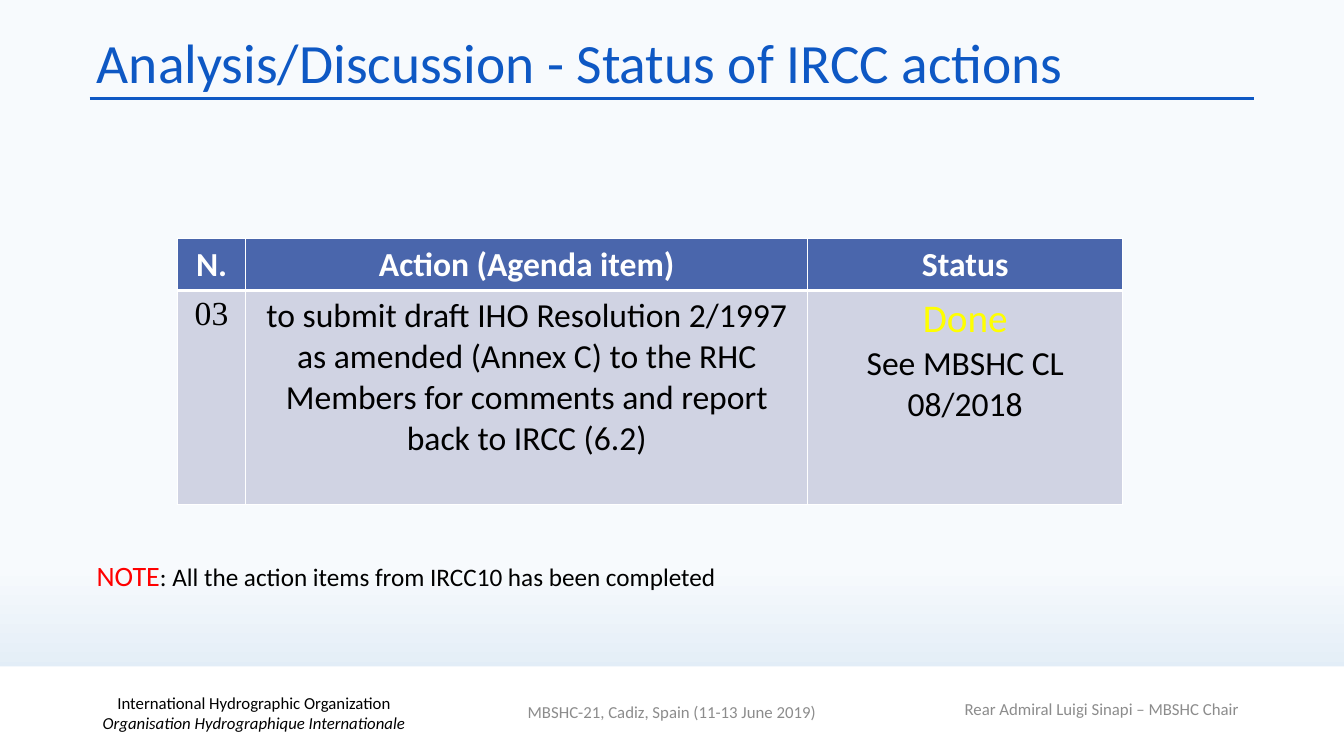
from lxml.etree import SubElement
from pptx import Presentation
from pptx.dml.color import RGBColor
from pptx.enum.shapes import MSO_CONNECTOR, MSO_SHAPE
from pptx.enum.text import MSO_ANCHOR, MSO_AUTO_SIZE, PP_ALIGN
from pptx.oxml.ns import qn
from pptx.util import Pt

BLUE = RGBColor(0x0E, 0x58, 0xC4)
HEADER_BLUE = RGBColor(0x4A, 0x66, 0xAC)
ROW_LILAC = RGBColor(0xD0, 0xD3, 0xE3)
SKY_TOP = RGBColor(0xF7, 0xFA, 0xFD)
SKY_BOTTOM = RGBColor(0xD0, 0xE2, 0xF1)
WHITE = RGBColor(0xFF, 0xFF, 0xFF)
BLACK = RGBColor(0, 0, 0)
GREY = RGBColor(0x8C, 0x8C, 0x8C)
RED = RGBColor(0xFF, 0, 0)
YELLOW = RGBColor(0xFF, 0xFF, 0)


def write(paragraph, text, size=24, color=BLACK, font="Calibri", bold=False, italic=False):
    """Add a formatted run to a paragraph."""
    run = paragraph.add_run()
    run.text = text
    run.font.size = Pt(size)
    run.font.name = font
    run.font.bold = bold
    run.font.italic = italic
    run.font.color.rgb = color


class SlideBuilder:
    """Hold the style and the current slide."""

    def __init__(self, slide):
        """Keep the slide to draw on."""
        self.slide = slide

    def background(self):
        """Fill the slide with the pale vertical gradient."""
        fill = self.slide.background.fill
        fill.gradient()
        fill.gradient_angle = 270
        stops = ((0.75, SKY_TOP), (1, SKY_BOTTOM))
        for stop, (position, color) in zip(fill.gradient_stops, stops):
            stop.position = position
            stop.color.rgb = color

    def rule(self, left, right, y):
        """Draw a horizontal blue line."""
        line = self.slide.shapes.add_connector(
            MSO_CONNECTOR.STRAIGHT, Pt(left), Pt(y), Pt(right), Pt(y))
        line.line.color.rgb = BLUE
        line.line.width = Pt(2.25)
        SubElement(line._element.spPr, qn("a:effectLst"))

    def band(self, left, top, width, height):
        """Draw a plain white rectangle."""
        band = self.slide.shapes.add_shape(
            MSO_SHAPE.RECTANGLE, Pt(left), Pt(top), Pt(width), Pt(height))
        band.shadow.inherit = False
        band.fill.solid()
        band.fill.fore_color.rgb = WHITE
        band.line.fill.background()

    def title(self, text, left, top, width, height):
        """Place and fill the title placeholder."""
        title = self.slide.shapes.title
        title.left, title.top, title.width, title.height = map(Pt, (left, top, width, height))
        frame = title.text_frame
        frame.auto_size = MSO_AUTO_SIZE.NONE
        frame.vertical_anchor = MSO_ANCHOR.MIDDLE
        heading = frame.paragraphs[0]
        heading.alignment = PP_ALIGN.LEFT
        heading.line_spacing = 0.9
        write(heading, text, size=39.6, color=BLUE)

    def text_box(self, left, top, width, height, wrap=True):
        """Add a text box and return its frame."""
        frame = self.slide.shapes.add_textbox(
            Pt(left), Pt(top), Pt(width), Pt(height)).text_frame
        frame.word_wrap = wrap
        return frame

    def footer(self, left, top, *lines):
        """Add a centred footer of (text, format) lines."""
        frame = self.text_box(left, top, 324, 28.8)
        frame.vertical_anchor = MSO_ANCHOR.MIDDLE
        paragraph = frame.paragraphs[0]
        paragraph.alignment = PP_ALIGN.CENTER
        for index, (text, style) in enumerate(lines):
            if index:
                paragraph.add_line_break()
            write(paragraph, text, size=12, **style)

    def cell(self, cell, paragraphs, fill, anchor, top_border, bottom_border):
        """Fill one table cell with centred paragraphs and white borders."""
        properties = cell._tc.get_or_add_tcPr()
        borders = {"a:lnL": 1, "a:lnR": 1, "a:lnT": top_border, "a:lnB": bottom_border}
        for tag, width in borders.items():
            border = SubElement(properties, qn(tag), w=str(Pt(width)))
            SubElement(SubElement(border, qn("a:solidFill")), qn("a:srgbClr"), val=str(WHITE))
        cell.fill.solid()
        cell.fill.fore_color.rgb = fill
        cell.vertical_anchor = anchor
        frame = cell.text_frame
        for index, (text, style) in enumerate(paragraphs):
            paragraph = frame.add_paragraph() if index else frame.paragraphs[0]
            paragraph.alignment = PP_ALIGN.CENTER
            write(paragraph, text, **style)

    def table(self, left, top, widths, heights, header, actions):
        """Add the table of actions."""
        table = self.slide.shapes.add_table(
            len(heights), len(widths), Pt(left), Pt(top),
            Pt(sum(widths)), Pt(sum(heights))).table
        for column, width in zip(table.columns, widths):
            column.width = Pt(width)
        for row, height in zip(table.rows, heights):
            row.height = Pt(height)
        for column, label in enumerate(header):
            self.cell(table.cell(0, column), [(label, {"color": WHITE, "bold": True})],
                      HEADER_BLUE, MSO_ANCHOR.MIDDLE, 1, 3)
        for row, action in enumerate(actions, 1):
            for column, paragraphs in enumerate(action):
                self.cell(table.cell(row, column), paragraphs,
                          ROW_LILAC, MSO_ANCHOR.TOP, 3 if row == 1 else 1, 1)


def main():
    """Build and save the slide."""
    deck = Presentation()
    deck.slide_width, deck.slide_height = Pt(960), Pt(540)
    page = SlideBuilder(deck.slides.add_slide(deck.slide_layouts[5]))
    page.background()
    page.rule(64, 896, 70.5)
    page.band(0, 476, 960, 64)
    page.footer(19.5, 494.6, ("International Hydrographic Organization", {}),
                ("Organisation Hydrographique Internationale", {"italic": True}))
    page.footer(625, 492, ("Rear Admiral Luigi Sinapi – MBSHC Chair", {"color": GREY}))
    page.title("Analysis/Discussion - Status of IRCC actions", 62, 21.6, 832, 50.4)
    action = (
        [("03", {"font": "Times New Roman"})],
        [("to submit draft IHO Resolution 2/1997 as amended (Annex C) to the RHC "
          "Members for comments and report back to IRCC (6.2)", {})],
        [("Done", {"size": 28, "color": YELLOW}), ("See MBSHC CL 08/2018", {})],
    )
    page.table(126.7, 170.5, (48.8, 401.5, 225), (37, 153),
               ("N.", "Action (Agenda item)", "Status"), [action])
    note = page.text_box(62, 395.5, 463, 31.5, wrap=False).paragraphs[0]
    write(note, "NOTE", size=20, color=RED)
    write(note, ": All the action items from IRCC10 has been completed", size=18)
    page.footer(318, 494, ("MBSHC-21, Cadiz, Spain (11-13 June 2019)", {"color": GREY}))
    deck.save("out.pptx")


if __name__ == "__main__":
    main()
